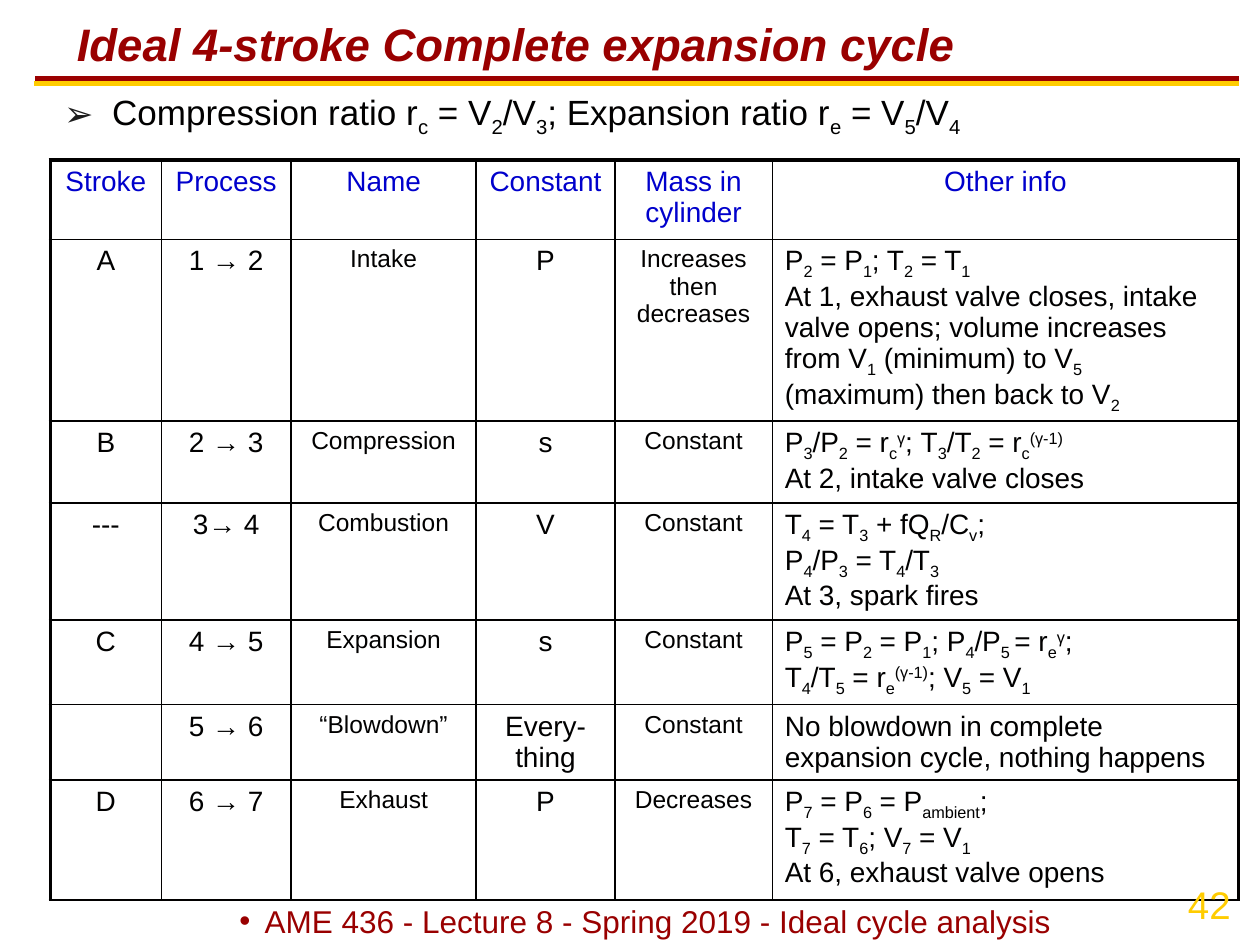
"""Builds the slide about the ideal 4-stroke complete expansion cycle."""
import pptx
import pptx.dml.color
import pptx.enum.shapes
import pptx.enum.text
import pptx.oxml.ns
import pptx.util
from lxml import etree

WIDTH = pptx.util.Inches(10)
HEIGHT = pptx.util.Inches(7.5)
COLORS = {"title": "990000", "rule": "9B0000", "gold": "FFCC00",
          "ink": "010000", "header": "0000CC", "bullet": "1C1C1C"}
BASELINES = {"_": "-25000", "^": "30000"}
COLUMN_SHARES = [8.8, 10.3, 14.7, 11, 12.5, 37]
ROW_SHARES = [8.4, 19.2, 8.67, 12.4, 8.93, 8, 12.67]
SMALL_COLUMNS = (2, 4)
INFO_COLUMN = 5
CYCLE = [
    ["Stroke", "Process", "Name", "Constant", "Mass in cylinder", "Other info"],
    ["A", "1 → 2", "Intake", "P", "Increases then decreases",
     "P{_2} = P{_1}; T{_2} = T{_1}\n"
     "At 1, exhaust valve closes, intake valve opens; volume increases from "
     "V{_1} (minimum) to V{_5} (maximum) then back to V{_2}"],
    ["B", "2 → 3", "Compression", "s", "Constant",
     "P{_3}/P{_2} = r{_c}{^γ}; T{_3}/T{_2} = r{_c}{^(γ-1)}\n"
     "At 2, intake valve closes"],
    ["---", "3→ 4", "Combustion", "V", "Constant",
     "T{_4} = T{_3} + fQ{_R}/C{_v};\nP{_4}/P{_3} = T{_4}/T{_3}\n"
     "At 3, spark fires"],
    ["C", "4 → 5", "Expansion", "s", "Constant",
     "P{_5} = P{_2} = P{_1}; P{_4}/P{_5 }= r{_e}{^γ};\n"
     "T{_4}/T{_5} = r{_e}{^(γ-1)}; V{_5} = V{_1}"],
    ["", "5 → 6", "“Blowdown”", "Every-thing", "Constant",
     "No blowdown in complete expansion cycle, nothing happens"],
    ["D", "6 → 7", "Exhaust", "P", "Decreases",
     "P{_7} = P{_6} = P{_ambient};\nT{_7} = T{_6}; V{_7} = V{_1}\n"
     "At 6, exhaust valve opens"],
]


def across(percent):
    return int(WIDTH * percent / 100)


def down(percent):
    return int(HEIGHT * percent / 100)


def box(left, top, width, height):
    return across(left), down(top), across(width), down(height)


def rgb(name):
    return pptx.dml.color.RGBColor.from_string(COLORS[name])


def add_run(paragraph, text, size, color, baseline=None):
    if not text:
        return
    run = paragraph.add_run()
    run.text = text
    run.font.name = "Arial"
    run.font.size = pptx.util.Pt(size)
    run.font.color.rgb = rgb(color)
    if baseline:
        run._r.get_or_add_rPr().set("baseline", baseline)


def write_formula(paragraph, text, size, color):
    plain, *pieces = text.split("{")
    add_run(paragraph, plain, size, color)
    for piece in pieces:
        script, _, plain = piece.partition("}")
        add_run(paragraph, script[1:], size, color, BASELINES[script[0]])
        add_run(paragraph, plain, size, color)


def write_lines(text_frame, text, size, color, alignment):
    for index, line in enumerate(text.split("\n")):
        paragraph = text_frame.add_paragraph() if index else text_frame.paragraphs[0]
        paragraph.alignment = alignment
        write_formula(paragraph, line, size, color)


def add_bullet(paragraph, character, color, indent):
    properties = paragraph._p.get_or_add_pPr()
    properties.set("marL", str(pptx.util.Inches(indent)))
    properties.set("indent", str(-pptx.util.Inches(indent)))
    bullet_color = etree.SubElement(properties, pptx.oxml.ns.qn("a:buClr"))
    etree.SubElement(bullet_color, pptx.oxml.ns.qn("a:srgbClr"), val=COLORS[color])
    etree.SubElement(properties, pptx.oxml.ns.qn("a:buFont"), typeface="Arial")
    etree.SubElement(properties, pptx.oxml.ns.qn("a:buChar"), char=character)


def fill_placeholder(shape, area, text, size, color, anchor):
    shape.left, shape.top, shape.width, shape.height = area
    text_frame = shape.text_frame
    text_frame.auto_size = pptx.enum.text.MSO_AUTO_SIZE.NONE
    text_frame.vertical_anchor = anchor
    paragraph = text_frame.paragraphs[0]
    paragraph.alignment = pptx.enum.text.PP_ALIGN.LEFT
    paragraph.space_before = pptx.util.Pt(0)
    write_formula(paragraph, text, size, color)
    return paragraph


def add_rule(slide, left, top, right, color):
    line = slide.shapes.add_connector(
        pptx.enum.shapes.MSO_CONNECTOR.STRAIGHT,
        across(left), down(top), across(right), down(top))
    line.line.color.rgb = rgb(color)
    line.line.width = pptx.util.Pt(3)
    etree.SubElement(line._element.spPr, pptx.oxml.ns.qn("a:effectLst"))


def add_label(slide, area, text, size, color, alignment):
    text_frame = slide.shapes.add_textbox(*area).text_frame
    text_frame.word_wrap = True
    write_lines(text_frame, text, size, color, alignment)
    return text_frame


def set_borders(cell, widths):
    properties = cell._tc.get_or_add_tcPr()
    for index, (side, width) in enumerate(widths.items()):
        border = etree.Element(pptx.oxml.ns.qn("a:ln" + side),
                               w=str(pptx.util.Pt(width)))
        fill = etree.SubElement(border, pptx.oxml.ns.qn("a:solidFill"))
        etree.SubElement(fill, pptx.oxml.ns.qn("a:srgbClr"), val=COLORS["ink"])
        properties.insert(index, border)


def format_cell(cell, text, row, column):
    centered = row == 0 or column != INFO_COLUMN
    alignment = pptx.enum.text.PP_ALIGN.CENTER if centered else pptx.enum.text.PP_ALIGN.LEFT
    size = 14 if row and column in SMALL_COLUMNS else 16
    write_lines(cell.text_frame, text, size, "ink" if row else "header", alignment)
    cell.fill.background()
    set_borders(cell, {"L": 1 if column else 2.25,
                       "R": 2.25 if column == INFO_COLUMN else 1,
                       "T": 1 if row else 2.25, "B": 1})


def add_cycle_table(slide):
    area = box(4, 16.93, sum(COLUMN_SHARES), sum(ROW_SHARES))
    table = slide.shapes.add_table(len(CYCLE), len(COLUMN_SHARES), *area).table
    table.first_row = table.horz_banding = False
    for column, share in zip(table.columns, COLUMN_SHARES):
        column.width = across(share)
    for row, share in zip(table.rows, ROW_SHARES):
        row.height = down(share)
    for row, texts in enumerate(CYCLE):
        for column, text in enumerate(texts):
            format_cell(table.cell(row, column), text, row, column)


def main():
    presentation = pptx.Presentation()
    presentation.slide_width, presentation.slide_height = WIDTH, HEIGHT
    slide = presentation.slides.add_slide(presentation.slide_layouts[1])
    anchors = pptx.enum.text.MSO_ANCHOR
    alignments = pptx.enum.text.PP_ALIGN

    add_rule(slide, 2.8, 8.27, 98.3, "rule")
    add_rule(slide, 2.7, 8.8, 98.3, "gold")
    title = fill_placeholder(
        slide.shapes.title, box(5.1, 2.27, 92.4, 5.6),
        "Ideal 4-stroke Complete expansion cycle", 26, "title", anchors.MIDDLE)
    title.line_spacing = 0.85
    title.runs[0].font.bold = title.runs[0].font.italic = True
    ratios = fill_placeholder(
        slide.placeholders[1], box(4.1, 8.93, 94.7, 85.73),
        "Compression ratio r{_c} = V{_2}/V{_3}; Expansion ratio r{_e} = V{_5}/V{_4}",
        20, "ink", anchors.TOP)
    add_bullet(ratios, "➢", "bullet", 0.38)
    add_cycle_table(slide)
    add_label(slide, box(93.3, 92.53, 5.8, 6.27), "42", 22, "gold", alignments.LEFT)
    footer = add_label(slide, box(9.2, 94.8, 85, 5.2),
                       "AME 436 - Lecture 8 - Spring 2019 - Ideal cycle analysis",
                       18, "title", alignments.CENTER)
    footer.margin_left = 0
    add_bullet(footer.paragraphs[0], "•", "title", 0.2)
    presentation.save("out.pptx")


if __name__ == "__main__":
    main()
